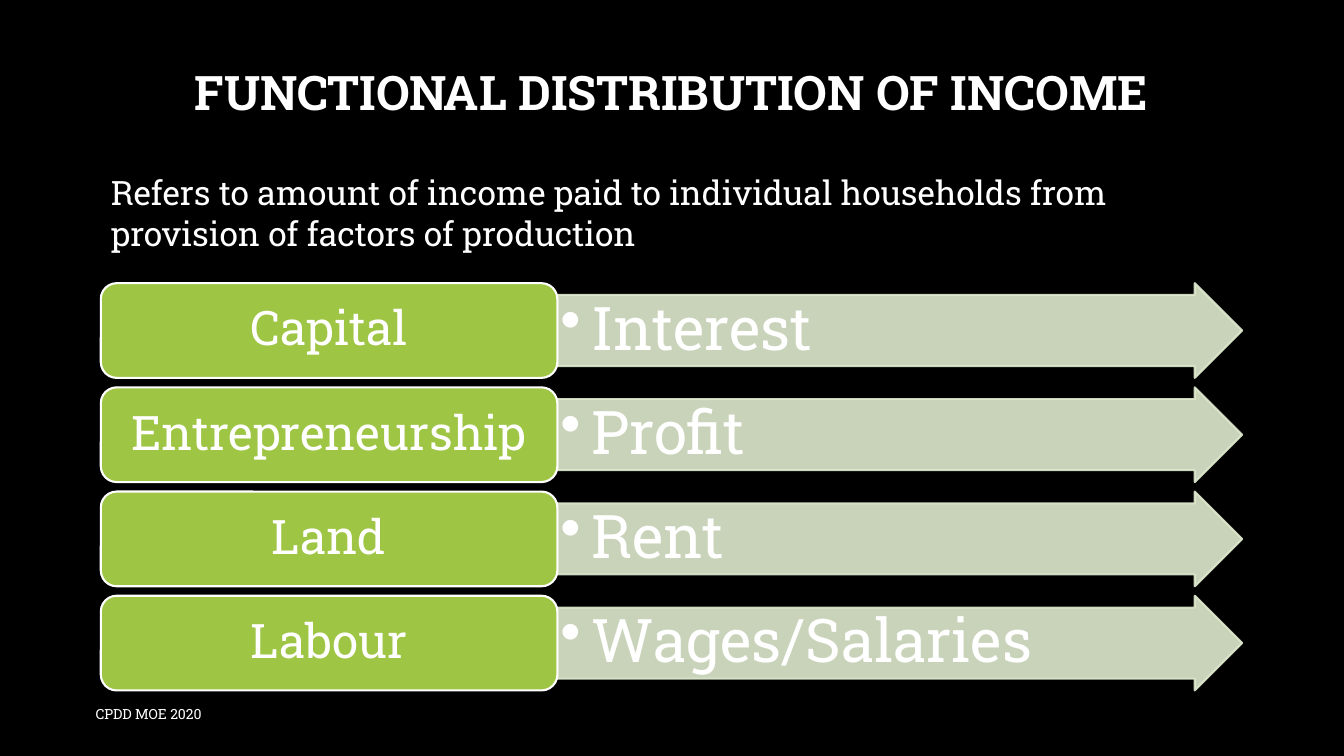
from lxml import etree
from pptx import Presentation
from pptx.dml.color import RGBColor
from pptx.enum import shapes, text
from pptx.oxml import ns
from pptx.util import Inches, Pt

FONT = "Roboto Slab"
WHITE, GREEN, PALE = "FFFFFF", "9EC544", "DFEACF"
FACTORS = [
    ("Capital", "Interest"),
    ("Entrepreneurship", "Profit"),
    ("Land", "Rent"),
    ("Labour", "Wages/Salaries"),
]


def rgb(color):
    return RGBColor.from_string(color)


def write(sp, words, size, align=text.PP_ALIGN.LEFT, anchor=text.MSO_ANCHOR.MIDDLE,
          bold=False, spacing=1.0, insets=(0.1, 0.05)):
    """Put one formatted paragraph in a shape and return it."""
    tf = sp.text_frame
    tf.word_wrap = True
    tf.vertical_anchor = anchor
    tf.margin_left = tf.margin_right = Inches(insets[0])
    tf.margin_top = tf.margin_bottom = Inches(insets[1])
    tf.text = words
    p = tf.paragraphs[0]
    p.alignment = align
    p.line_spacing = spacing
    font = p.runs[0].font
    font.name, font.size, font.bold = FONT, Pt(size), bold
    font.color.rgb = rgb(color=WHITE)
    return p


def add_text(slide, box, words, size, **style):
    sp = slide.shapes.add_textbox(*map(Inches, box))
    write(sp, words, size, **style)


def add_block(slide, kind, box, fill, line, opacity=100):
    """Add a filled, outlined preset shape; opacity is in percent."""
    sp = slide.shapes.add_shape(kind, *map(Inches, box))
    sp.shadow.inherit = False
    sp.fill.solid()
    sp.fill.fore_color.rgb = rgb(fill)
    sp.line.color.rgb = rgb(line)
    sp.line.width = Pt(1.5)
    if opacity < 100:
        for color in sp._element.spPr.iter(ns.qn("a:srgbClr")):
            etree.SubElement(color, ns.qn("a:alpha"), val=str(opacity * 1000))
    return sp


def add_bullet(p, indent):
    pPr = p._p.get_or_add_pPr()
    pPr.set("marL", str(Inches(indent)))
    pPr.set("indent", str(-Inches(indent)))
    etree.SubElement(pPr, ns.qn("a:buChar"), char="•")


def add_factor_row(slide, box, factor, reward):
    """Add a factor of production with an arrow naming what it earns."""
    left, top, width, height = box
    label_width = width * 0.4
    arrow = add_block(slide, shapes.MSO_SHAPE.RIGHT_ARROW,
                      (left + label_width, top, width - label_width, height),
                      PALE, PALE, opacity=90)
    arrow.adjustments[0] = 0.75
    arrow.adjustments[1] = 0.5
    p = write(arrow, reward, 43, anchor=text.MSO_ANCHOR.TOP, spacing=0.9,
              insets=(0.03, 0.03))
    p.level = 1
    add_bullet(p, 0.31)

    label = add_block(slide, shapes.MSO_SHAPE.ROUNDED_RECTANGLE,
                      (left, top, label_width, height), GREEN, WHITE)
    write(label, factor, 34, align=text.PP_ALIGN.CENTER, spacing=0.9,
          insets=(0.14, 0.07))


def add_factor_list(slide, box, rows):
    """Stack the rows with gaps of a tenth of a row."""
    left, top, width, height = box
    row_height = height / (len(rows) + 0.1 * (len(rows) - 1))
    for i, (factor, reward) in enumerate(rows):
        row_top = top + i * row_height * 1.1
        add_factor_row(slide, (left, row_top, width, row_height), factor, reward)


def main():
    prs = Presentation()
    prs.slide_width, prs.slide_height = Inches(13.33), Inches(7.5)
    slide = prs.slides.add_slide(prs.slide_layouts[6])
    slide.background.fill.solid()
    slide.background.fill.fore_color.rgb = rgb("000000")

    add_text(slide, (1, 0.47, 11.32, 0.94), "FUNCTIONAL DISTRIBUTION OF INCOME", 34,
             align=text.PP_ALIGN.CENTER, bold=True, spacing=0.9)
    add_factor_list(slide, (1, 2.81, 11.32, 4.04), FACTORS)
    add_text(slide, (0.85, 6.88, 7.3, 0.4), "CPDD MOE 2020", 10)
    add_text(slide, (1, 1.66, 11.32, 0.91),
             "Refers to amount of income paid to individual households "
             "from provision of factors of production",
             24, anchor=text.MSO_ANCHOR.TOP)
    prs.save("out.pptx")


if __name__ == "__main__":
    main()
